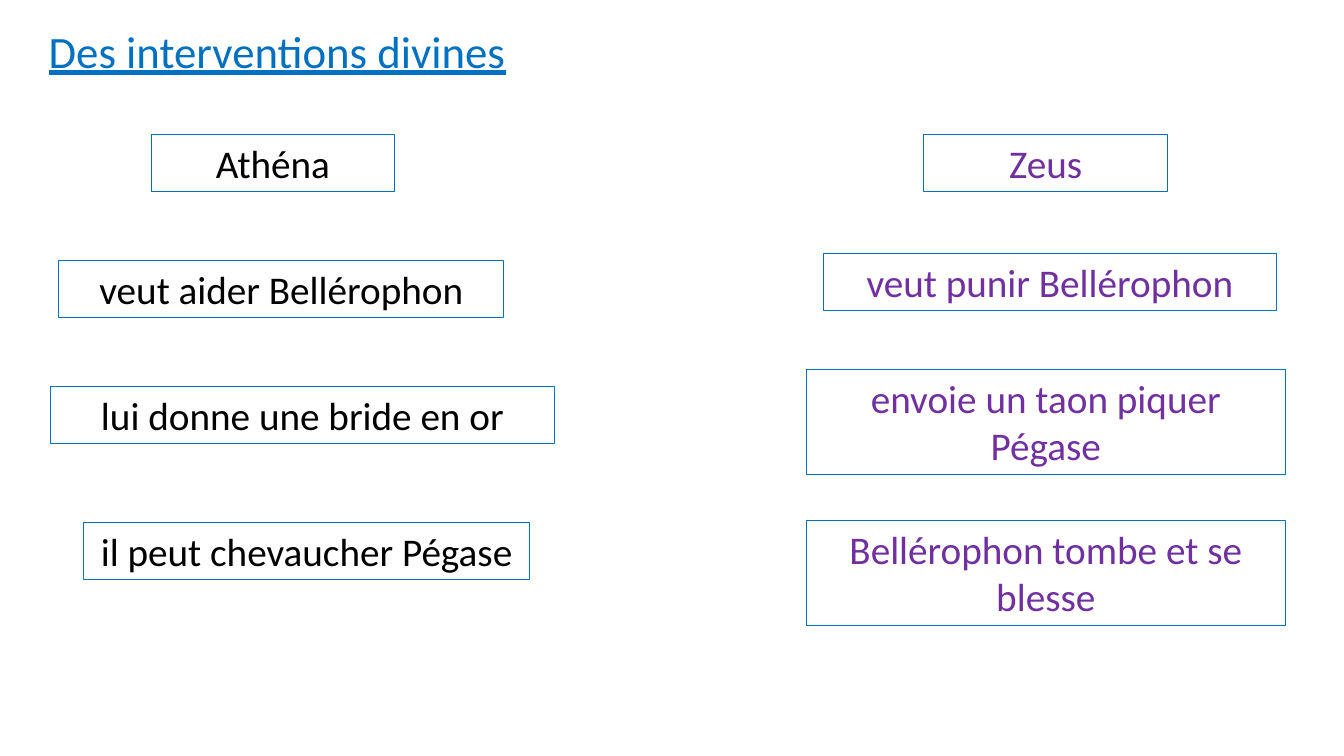
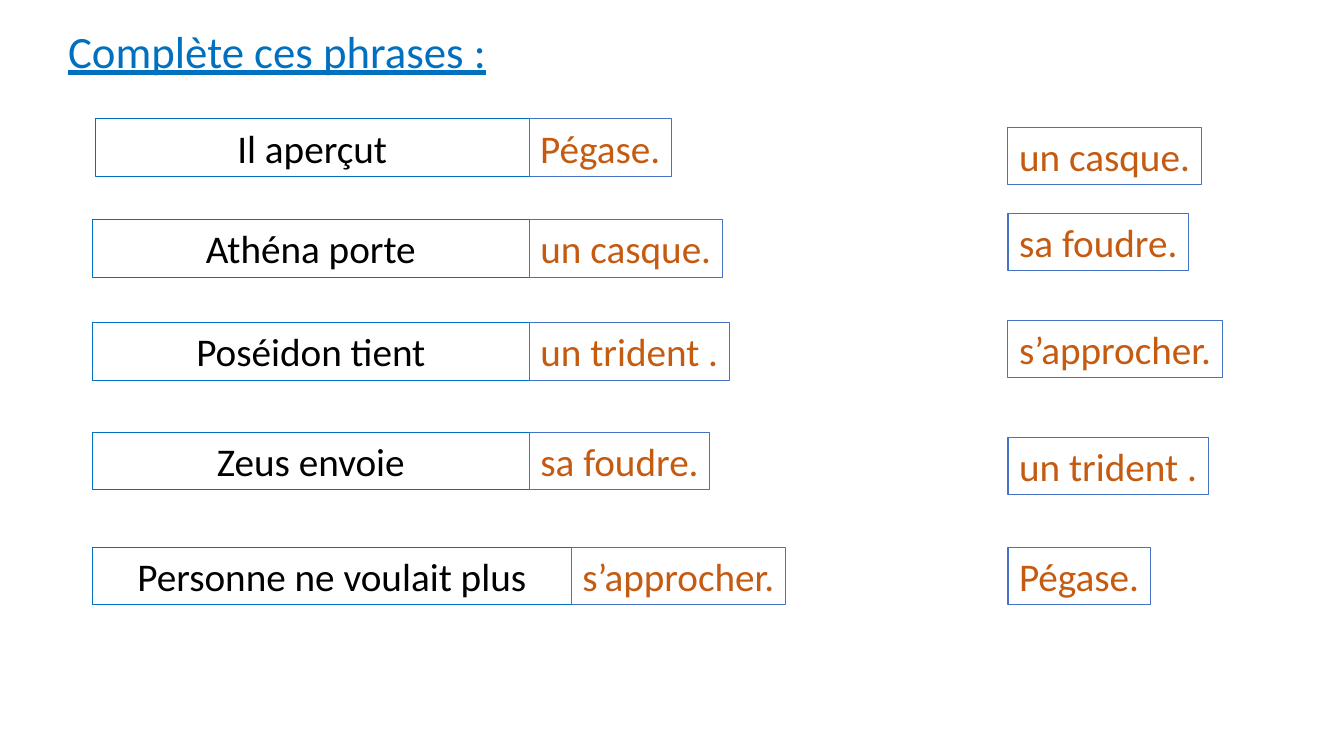
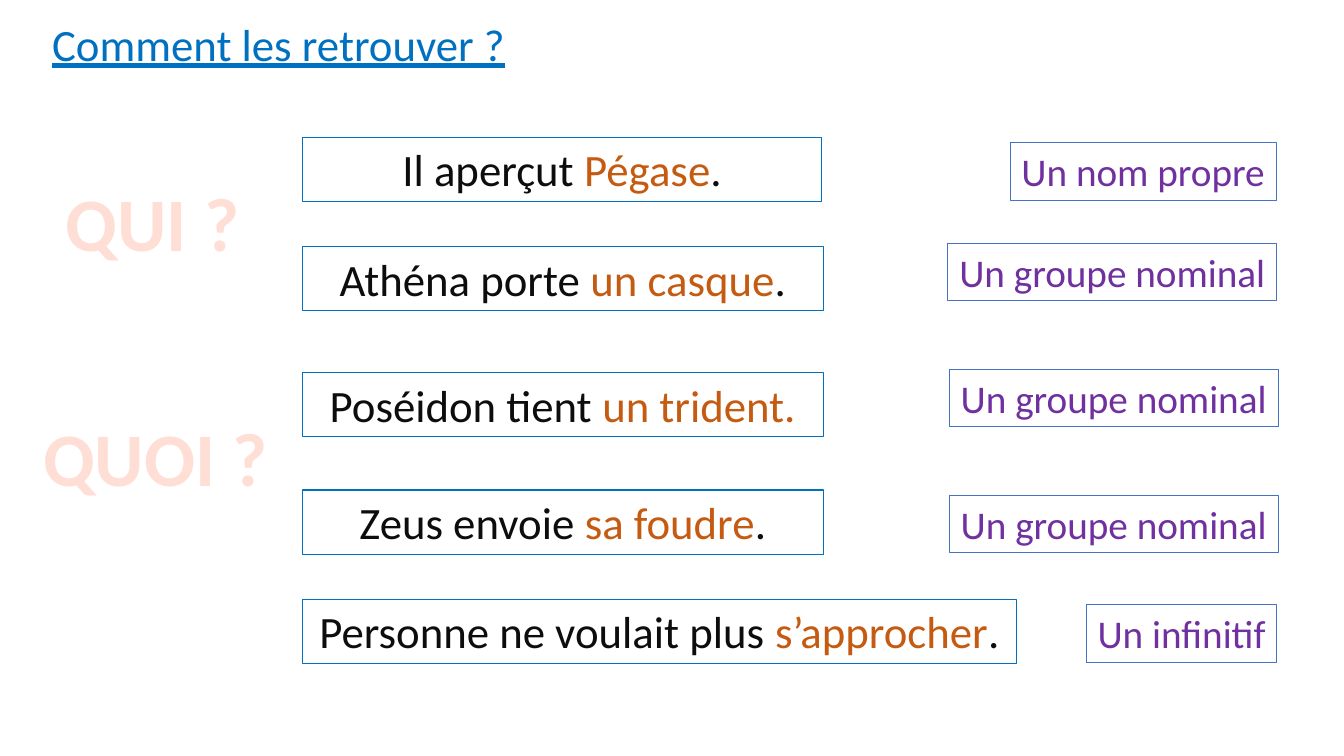
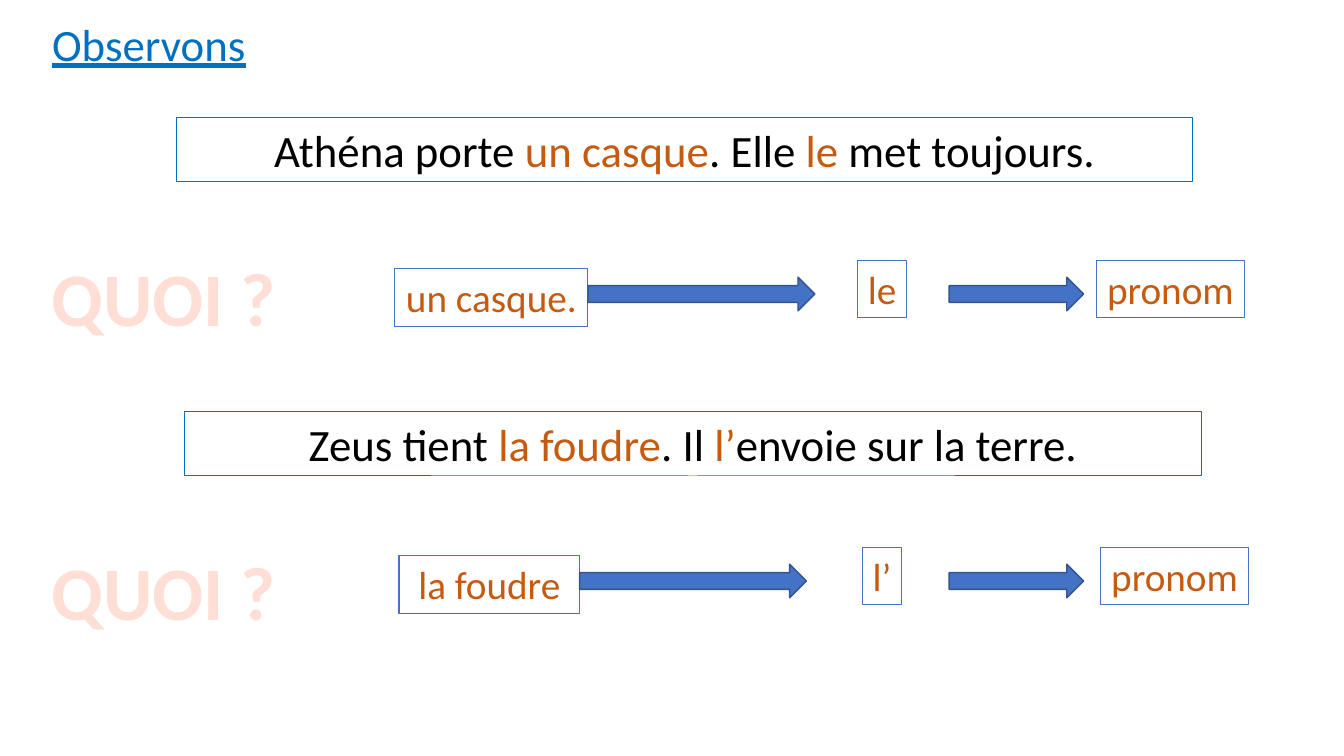
from pptx import Presentation
from pptx.dml.color import RGBColor
from pptx.enum.shapes import MSO_SHAPE
from pptx.enum.text import MSO_ANCHOR, MSO_AUTO_SIZE, PP_ALIGN
from pptx.util import Pt

RECTANGLE, ARROW = MSO_SHAPE.RECTANGLE, MSO_SHAPE.RIGHT_ARROW
TOP, NO_FIT = MSO_ANCHOR.TOP, MSO_AUTO_SIZE.NONE
LEFT, CENTER = PP_ALIGN.LEFT, PP_ALIGN.CENTER

BLUE = RGBColor(0x00, 0x70, 0xC0)
ARROW_BLUE = RGBColor(0x44, 0x72, 0xC4)
ARROW_EDGE = RGBColor(0x32, 0x54, 0x91)
PURPLE = RGBColor(0x70, 0x30, 0xA0)
ORANGE = RGBColor(0xC5, 0x5A, 0x11)
PINK = RGBColor(0xFF, 0xDE, 0xD6)
BLACK = RGBColor(0x00, 0x00, 0x00)
NEAR_BLACK = RGBColor(0x0D, 0x0D, 0x0D)

FONT = "Calibri"
LINE_HEIGHT, TWO_LINES, SENTENCE_HEIGHT = 41, 75, 46
ANSWER_WIDTHS = {"Pégase.": 101.5, "un casque.": 138, "un trident .": 143,
                 "sa foudre.": 129, "s’approcher.": 153}


def write(shape, parts, size, color, align=CENTER, wrap=True):
    """Write parts in one paragraph, every second one in orange."""
    frame = shape.text_frame
    frame.word_wrap = wrap
    frame.auto_size = NO_FIT
    frame.vertical_anchor = TOP
    paragraph = frame.paragraphs[0]
    paragraph.alignment = align
    paragraph.font.name = FONT
    paragraph.font.size = Pt(size)
    paragraph.font.color.rgb = color
    for index, part in enumerate(parts):
        run = paragraph.add_run()
        run.text = part
        if index % 2:
            run.font.color.rgb = ORANGE
    return paragraph


def add_titled_slide(deck, title, left, top, width, align):
    """Add a slide with the underlined blue title."""
    slide = deck.slides.add_slide(deck.slide_layouts[5])
    heading = slide.shapes.title
    heading.left, heading.top = Pt(left), Pt(top)
    heading.width, heading.height = Pt(width), Pt(SENTENCE_HEIGHT)
    write(heading, [title], 32, BLUE, align).font.underline = True
    return slide


def add_block(slide, kind, left, top, width, height, edge, weight=0.75):
    """Add an unfilled shape with a thin edge."""
    block = slide.shapes.add_shape(kind, Pt(left), Pt(top), Pt(width), Pt(height))
    block.shadow.inherit = False
    block.fill.background()
    block.line.color.rgb = edge
    block.line.width = Pt(weight)
    return block


def add_phrase(slide, left, top, width, text, color, height=LINE_HEIGHT):
    """Add a blue-edged box with a phrase."""
    box = add_block(slide, RECTANGLE, left, top, width, height, BLUE)
    write(box, [text], 28, color)


def add_sentence(slide, left, top, width, parts, color):
    """Add a large sentence with its complements in orange."""
    box = add_block(slide, RECTANGLE, left, top, width, SENTENCE_HEIGHT, BLUE)
    write(box, parts, 32, color)


def add_tag(slide, left, top, width, text, color=ORANGE):
    """Add a small box with one unwrapped label."""
    tag = add_block(slide, RECTANGLE, left, top, width, LINE_HEIGHT, ARROW_BLUE)
    write(tag, [text], 28, color, wrap=False)


def add_arrow(slide, left, top, width):
    """Add a solid arrow pointing right."""
    arrow = add_block(slide, ARROW, left, top, width, 24, ARROW_EDGE, 1)
    arrow.fill.solid()
    arrow.fill.fore_color.rgb = ARROW_BLUE


def add_question(slide, center, top, text):
    """Add a big pale question word around a centre."""
    question = slide.shapes.add_textbox(Pt(center - 90), Pt(top), Pt(180), Pt(73))
    write(question, [text], 54, PINK).font.bold = True


def add_god_column(slide, left, top, color, steps):
    """Stack one god's steps at offsets from the column's corner."""
    for x, y, width, height, text in steps:
        add_phrase(slide, left + x, top + y, width, text, color, height)


def add_completed_phrases(slide, left, rows):
    """Add each phrase start with its answer attached."""
    for top, width, start, answer in rows:
        add_phrase(slide, left, top, width, start, BLACK)
        add_tag(slide, left + width, top, ANSWER_WIDTHS[answer], answer)


def add_answer_bank(slide, left, answers):
    """List the answers to choose from."""
    for top, answer in answers:
        add_tag(slide, left, top, ANSWER_WIDTHS[answer], answer)


def add_analysed_sentences(slide, left, rows):
    """Add sentences, each with the nature of its complement."""
    for top, width, parts, tag_left, tag_top, tag_width, nature in rows:
        add_sentence(slide, left, top, width, parts, NEAR_BLACK)
        add_tag(slide, tag_left, tag_top, tag_width, nature, PURPLE)


def add_pronoun_example(slide, left, top, row_top, parts, word, pronoun, nature_left):
    """Add a sentence and the chain from complement to pronoun."""
    word_left, word_width, word_text = word
    pronoun_width, pronoun_text = pronoun
    add_sentence(slide, left, top, 726, parts, BLACK)
    add_question(slide, 117, top + 92, "QUOI ?")
    add_tag(slide, word_left, row_top + 6, word_width, word_text)
    add_arrow(slide, word_left + word_width, row_top + 12, 162)
    add_tag(slide, 630 - pronoun_width / 2, row_top, pronoun_width, pronoun_text)
    add_arrow(slide, 678, row_top + 12, 96)
    add_tag(slide, nature_left, row_top, 106, "pronom")


def build_interventions(deck):
    """Build the slide on the two gods."""
    slide = add_titled_slide(deck, "Des interventions divines", 0, 13, 396, CENTER)
    add_god_column(slide, 36, 96, BLACK, [
        (72, 0, 174, LINE_HEIGHT, "Athéna"),
        (6, 90, 318, LINE_HEIGHT, "veut aider Bellérophon"),
        (0, 180, 360, LINE_HEIGHT, "lui donne une bride en or"),
        (24, 277, 318, LINE_HEIGHT, "il peut chevaucher Pégase")])
    add_god_column(slide, 576, 96, PURPLE, [
        (84, 0, 174, LINE_HEIGHT, "Zeus"),
        (12, 85, 324, LINE_HEIGHT, "veut punir Bellérophon"),
        (0, 168, 342, TWO_LINES, "envoie un taon piquer Pégase"),
        (0, 276, 342, TWO_LINES, "Bellérophon tombe et se blesse")])


def build_completion(deck):
    """Build the sentence completion slide."""
    slide = add_titled_slide(deck, "Complète ces phrases :", 0, 13, 396, CENTER)
    add_completed_phrases(slide, 68, [(85, 310, "Il aperçut", "Pégase.")])
    add_completed_phrases(slide, 66, [
        (157, 312, "Athéna porte", "un casque."),
        (230.5, 312, "Poséidon tient", "un trident ."),
        (309, 312, "Zeus envoie", "sa foudre."),
        (391, 342, "Personne ne voulait plus", "s’approcher.")])
    add_answer_bank(slide, 720, [
        (91, "un casque."), (152.5, "sa foudre."), (229, "s’approcher."),
        (312.5, "un trident ."), (391, "Pégase.")])


def build_questions(deck):
    """Build the slide on finding complements."""
    slide = add_titled_slide(deck, "Comment les retrouver ?", 30, 8, 420, LEFT)
    add_question(slide, 109, 122, "QUI ?")
    add_question(slide, 111, 290, "QUOI ?")
    group = "Un groupe nominal"
    add_analysed_sentences(slide, 216, [
        (98, 371, ["Il aperçut ", "Pégase", "."], 721.5, 102, 190, "Un nom propre"),
        (176, 372, ["Athéna porte ", "un casque", "."], 677, 174, 235, group),
        (266, 372, ["Poséidon tient ", "un trident."], 678, 264, 235, group),
        (350, 372, ["Zeus envoie ", "sa foudre", "."], 678, 354, 235, group),
        (428, 510, ["Personne ne voulait plus ", "s’approcher", "."],
         776, 432, 136, "Un infinitif")])


def build_observation(deck):
    """Build the slide on pronouns."""
    slide = add_titled_slide(deck, "Observons", 30, 8, 420, LEFT)
    add_pronoun_example(
        slide, 126, 84, 186,
        ["Athéna porte ", "un casque", ". Elle ", "le", " met toujours."],
        (282, 138, "un casque."), (35, "le"), 783)
    add_pronoun_example(
        slide, 132, 294, 391,
        ["Zeus tient ", "la foudre", ". Il ", "l’", "envoie sur la terre."],
        (285, 129, "la foudre"), (28, "l’"), 786)


def main():
    """Build and save the deck."""
    deck = Presentation()
    deck.slide_width, deck.slide_height = Pt(960), Pt(540)
    for build in (build_interventions, build_completion,
                  build_questions, build_observation):
        build(deck)
    deck.save("out.pptx")


if __name__ == "__main__":
    main()
